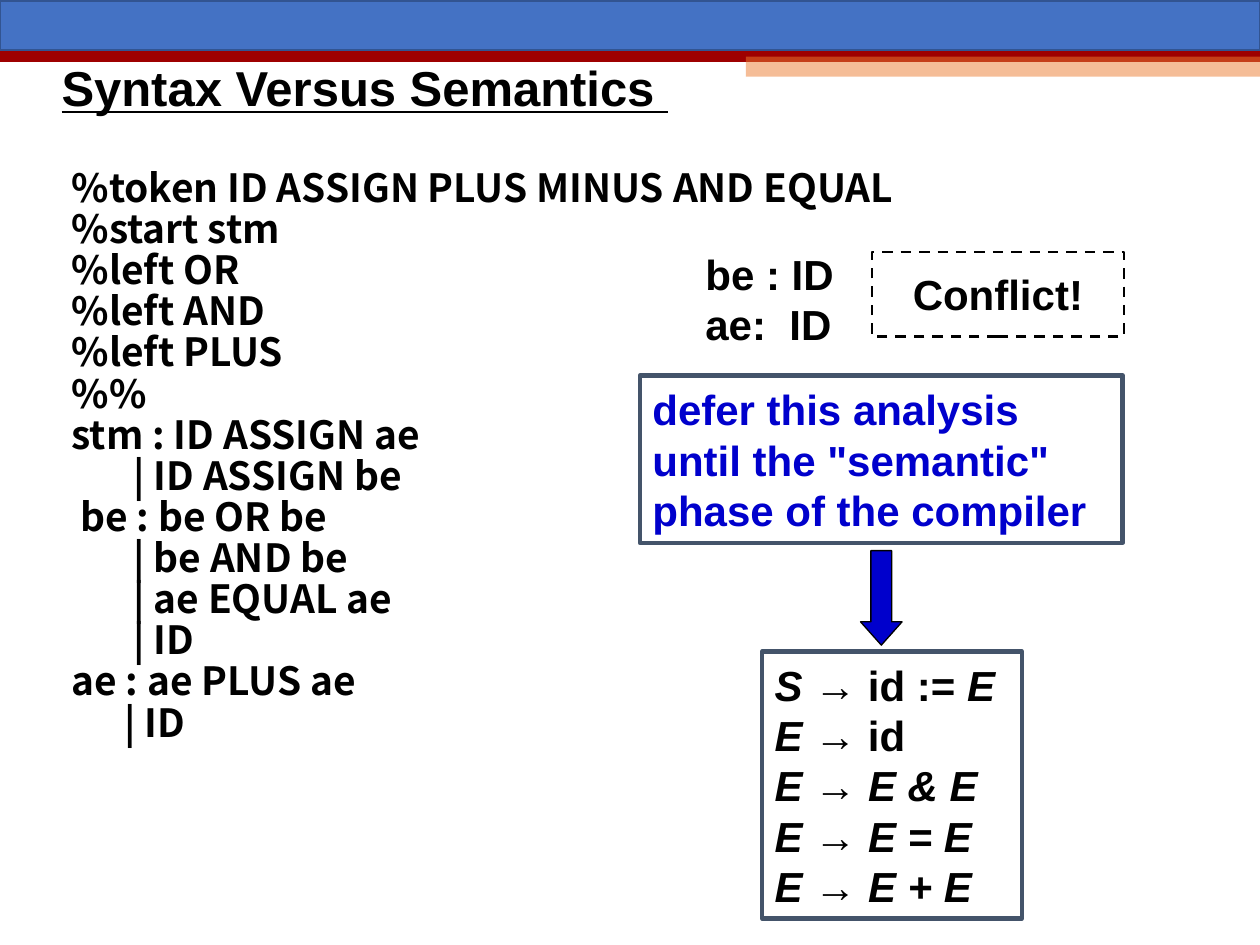
from lxml import etree
from pptx import Presentation
from pptx.dml.color import RGBColor
from pptx.enum.dml import MSO_LINE
from pptx.enum.shapes import MSO_CONNECTOR, MSO_SHAPE as Shape
from pptx.enum.text import MSO_ANCHOR as Anchor, MSO_AUTO_SIZE as Fit, PP_ALIGN as Align
from pptx.oxml.ns import qn
from pptx.util import Inches, Pt

BLACK = RGBColor(0x00, 0x00, 0x00)
WHITE = RGBColor(0xFF, 0xFF, 0xFF)
RED = RGBColor(0x9E, 0x00, 0x00)
PEACH = RGBColor(0xED, 0x7D, 0x31)
BLUE = RGBColor(0x44, 0x72, 0xC4)
NAVY = RGBColor(0x32, 0x54, 0x91)
SLATE = RGBColor(0x44, 0x54, 0x6A)
INK = RGBColor(0x00, 0x00, 0xCC)

# Grammar lines, each with its indent in inches
ALT = 0.49
GRAMMAR = [
    ("%token ID ASSIGN PLUS MINUS AND EQUAL", 0),
    ("%start stm", 0),
    ("%left OR", 0),
    ("%left AND", 0),
    ("%left PLUS", 0),
    ("%%", 0),
    ("stm : ID ASSIGN ae", 0),
    ("| ID ASSIGN be", ALT),
    ("be : be OR be", 0.07),
    ("| be AND be", ALT),
    ("| ae EQUAL ae", ALT),
    ("| ID", ALT),
    ("ae : ae PLUS ae", 0),
    ("| ID", 0.42),
]

# Productions: head, upright part, italic tail
RULES = [
    ("S", " → id := ", "E"),
    ("E", " → id", ""),
    ("E", " → ", "E & E"),
    ("E", " → ", "E = E"),
    ("E", " → ", "E + E"),
]


def style(par, size=24, color=BLACK, face="Arial"):
    font = par.font
    font.name, font.size, font.bold = face, Pt(size), True
    font.color.rgb = color


def add_box(slide, kind, area, fill=None, line=None, width=1):
    box = slide.shapes.add_shape(kind, *map(Inches, area))
    box.shadow.inherit = False
    if fill is None:
        box.fill.background()
    else:
        box.fill.solid()
        box.fill.fore_color.rgb = fill
    if line is None:
        box.line.fill.background()
    else:
        box.line.color.rgb = line
        box.line.width = Pt(width)
    return box


def add_text(slide, area, anchor=Anchor.TOP):
    frame = slide.shapes.add_textbox(*map(Inches, area)).text_frame
    frame.word_wrap = True
    frame.vertical_anchor = anchor
    return frame


def add_lines(frame, lines, align=Align.LEFT, **look):
    frame.text = "\n".join(lines)
    for par in frame.paragraphs:
        par.alignment = align
        style(par, **look)


def add_band(slide):
    rule = slide.shapes.add_connector(
        MSO_CONNECTOR.STRAIGHT, 0, Inches(0.44), Inches(10), Inches(0.44))
    rule.line.color.rgb = RED
    rule.line.width = Pt(7.5)
    etree.SubElement(rule._element.spPr, qn("a:effectLst"))
    strip = add_box(slide, Shape.RECTANGLE, (5.92, 0.45, 4.08, 0.16), PEACH)
    tint = strip._element.spPr.find(".//" + qn("a:srgbClr"))
    etree.SubElement(tint, qn("a:alpha"), val="50000")
    add_box(slide, Shape.RECTANGLE, (0, 0.01, 10, 0.39), BLUE, NAVY)


def add_grammar(slide):
    frame = add_text(slide, (0.47, 1.38, 8.75, 4.95))
    add_lines(frame, [text for text, _ in GRAMMAR],
              size=22.2, face="Noto Sans CJK SC")
    for par, (_, indent) in zip(frame.paragraphs, GRAMMAR):
        par.line_spacing = 0.6
        par.space_before = Pt(7.5)
        par._p.get_or_add_pPr().set("marL", str(Inches(indent)))


def add_rules(slide):
    box = add_box(slide, Shape.RECTANGLE, (6.05, 5.17, 2.06, 2.12), None, SLATE, 2.5)
    frame = box.text_frame
    frame.word_wrap = False
    frame.auto_size = Fit.SHAPE_TO_FIT_TEXT
    for i, parts in enumerate(RULES):
        par = frame.add_paragraph() if i else frame.paragraphs[0]
        par.alignment = Align.LEFT
        style(par)
        for part, slant in zip(parts, (True, False, True)):
            if part:
                run = par.add_run()
                run.text = part
                run.font.italic = slant


def main():
    deck = Presentation()
    deck.slide_width, deck.slide_height = Inches(10), Inches(7.5)
    slide = deck.slides.add_slide(deck.slide_layouts[6])

    # Header and title
    add_band(slide)
    title = add_text(slide, (0.39, 0.33, 9, 0.78), Anchor.MIDDLE)
    add_lines(title, ["Syntax Versus Semantics "], size=28)
    title.paragraphs[0].font.underline = True
    title.paragraphs[0].line_spacing = 0.9

    add_grammar(slide)

    # Conflicting rules
    pair = add_text(slide, (5.5, 1.92, 1.42, 0.9))
    add_lines(pair, ["be : ID", "ae:  ID"])
    clash = add_box(slide, Shape.RECTANGLE, (6.92, 2, 2, 0.67), WHITE, BLACK, 1.5)
    clash.line.dash_style = MSO_LINE.DASH
    clash.text_frame.word_wrap = False
    add_lines(clash.text_frame, ["Conflict!"], Align.CENTER)

    # Advice, and the grammar it leads to
    advice = add_box(slide, Shape.RECTANGLE, (5.08, 2.98, 3.83, 1.33), None, SLATE, 2.5)
    advice.text_frame.auto_size = Fit.SHAPE_TO_FIT_TEXT
    add_lines(advice.text_frame,
              ['defer this analysis until the "semantic" phase of the compiler'],
              color=INK)
    add_rules(slide)
    arrow = add_box(slide, Shape.DOWN_ARROW, (6.83, 4.37, 0.33, 0.75), INK, BLACK, 0.75)
    arrow.adjustments[0] = 0.5
    arrow.adjustments[1] = 0.56

    deck.save("out.pptx")


if __name__ == "__main__":
    main()
